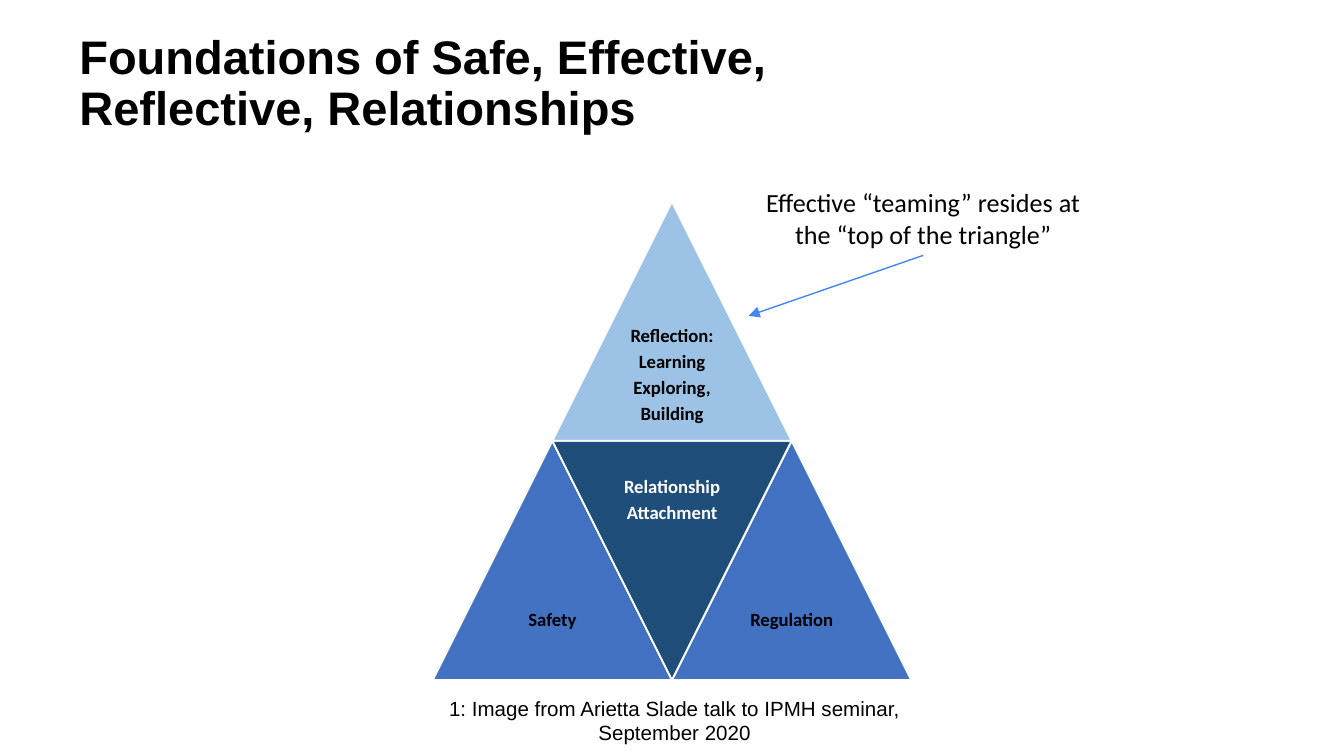
from lxml.etree import SubElement
from pptx import Presentation
from pptx.dml.color import RGBColor
from pptx.enum.shapes import MSO_CONNECTOR
from pptx.enum.text import MSO_ANCHOR, MSO_AUTO_SIZE, PP_ALIGN
from pptx.oxml.ns import qn
from pptx.util import Inches, Pt

# Content
TITLE = "Foundations of Safe, Effective, Reflective, Relationships"
CALLOUT = "Effective “teaming” resides at the “top of the triangle”"
SOURCE = "1: Image from Arietta Slade talk to IPMH seminar, September 2020"

# Pyramid grid: columns are half a triangle wide, rows one triangle high
APEX_X, APEX_Y, SIDE = 5, 1.5, 1.78
# lines, left column, row, points up, fill, text colour, anchor
TRIANGLES = [
    (["Safety"], -2, 1, True, "4372C3", "000000", MSO_ANCHOR.MIDDLE),
    (["Regulation"], 0, 1, True, "4372C3", "000000", MSO_ANCHOR.MIDDLE),
    (["Relationship", "Attachment"], -1, 1, False, "1E4E79", "FFFFFF", MSO_ANCHOR.MIDDLE),
    (["Reflection:", "Learning", "Exploring,", "Building"], -1, 0, True,
     "9CC2E5", "000000", MSO_ANCHOR.TOP),
]


def color(value):
    return RGBColor.from_string(value)


def write(shape, lines, size, font, text_color="000000", bold=False,
          align=PP_ALIGN.CENTER, anchor=MSO_ANCHOR.MIDDLE, spacing=1.0,
          insets=(0.07, 0.04, 0.07, 0.04)):
    frame = shape.text_frame
    frame.text = "\n".join(lines)
    frame.word_wrap = True
    frame.auto_size = MSO_AUTO_SIZE.NONE
    frame.vertical_anchor = anchor
    (frame.margin_left, frame.margin_top,
     frame.margin_right, frame.margin_bottom) = map(Inches, insets)
    for index, paragraph in enumerate(frame.paragraphs):
        paragraph.alignment = align
        paragraph.line_spacing = spacing
        paragraph.space_before = Pt(3 if index else 0)
        for run in paragraph.runs:
            run.font.size, run.font.name, run.font.bold = Pt(size), font, bold
            run.font.color.rgb = color(text_color)


def add_text(slide, box, text, size, font, anchor):
    shape = slide.shapes.add_textbox(*map(Inches, box))
    write(shape, [text], size, font, anchor=anchor)


def add_triangle(slide, lines, column, row, points_up, fill, text_color, anchor):
    left, top = APEX_X + column * SIDE / 2, APEX_Y + row * SIDE
    base, tip = (top + SIDE, top) if points_up else (top, top + SIDE)
    corners = [(Inches(x), Inches(y)) for x, y in
               [(left, base), (left + SIDE / 2, tip), (left + SIDE, base)]]
    builder = slide.shapes.build_freeform(*corners[0])
    builder.add_line_segments(corners[1:], close=True)
    shape = builder.convert_to_shape()
    shape.shadow.inherit = False
    shape.fill.solid()
    shape.fill.fore_color.rgb = color(fill)
    shape.line.color.rgb = color("FFFFFF")
    shape.line.width = Pt(1)
    # Keep the text in the wide half of the triangle
    insets = (0.49, 0.93, 0.49, 0.04) if points_up else (0.49, 0.04, 0.49, 0.93)
    write(shape, lines, 10, "Calibri", text_color, True,
          anchor=anchor, spacing=0.9, insets=insets)


def add_arrow(slide, start, end):
    arrow = slide.shapes.add_connector(
        MSO_CONNECTOR.STRAIGHT, *map(Inches, start + end))
    arrow.line.color.rgb = color("4285F4")
    arrow.line.width = Pt(0.75)
    SubElement(arrow.line._get_or_add_ln(), qn("a:tailEnd"), type="triangle")
    SubElement(arrow._element.spPr, qn("a:effectLst"))


def main():
    presentation = Presentation()
    presentation.slide_width = Inches(10)
    presentation.slide_height = Inches(10) * 9 // 16
    slide = presentation.slides.add_slide(presentation.slide_layouts[5])

    # Title
    title = slide.shapes.title
    title.left, title.top, title.width, title.height = map(
        Inches, (0.52, 0.22, 6.47, 0.82))
    write(title, [TITLE], 25.2, "Arial", bold=True, align=PP_ALIGN.LEFT, spacing=0.9)

    # Source line, then callout with its arrow
    add_text(slide, (2.97, 5.21, 4.1, 0.3), SOURCE, 11, "Arial", MSO_ANCHOR.MIDDLE)
    add_arrow(slide, (6.87, 1.9), (5.57, 2.35))
    add_text(slide, (5.6, 1.35, 2.54, 0.55), CALLOUT, 14, "Calibri", MSO_ANCHOR.TOP)

    # Pyramid
    for triangle in TRIANGLES:
        add_triangle(slide, *triangle)

    presentation.save("out.pptx")


if __name__ == "__main__":
    main()
